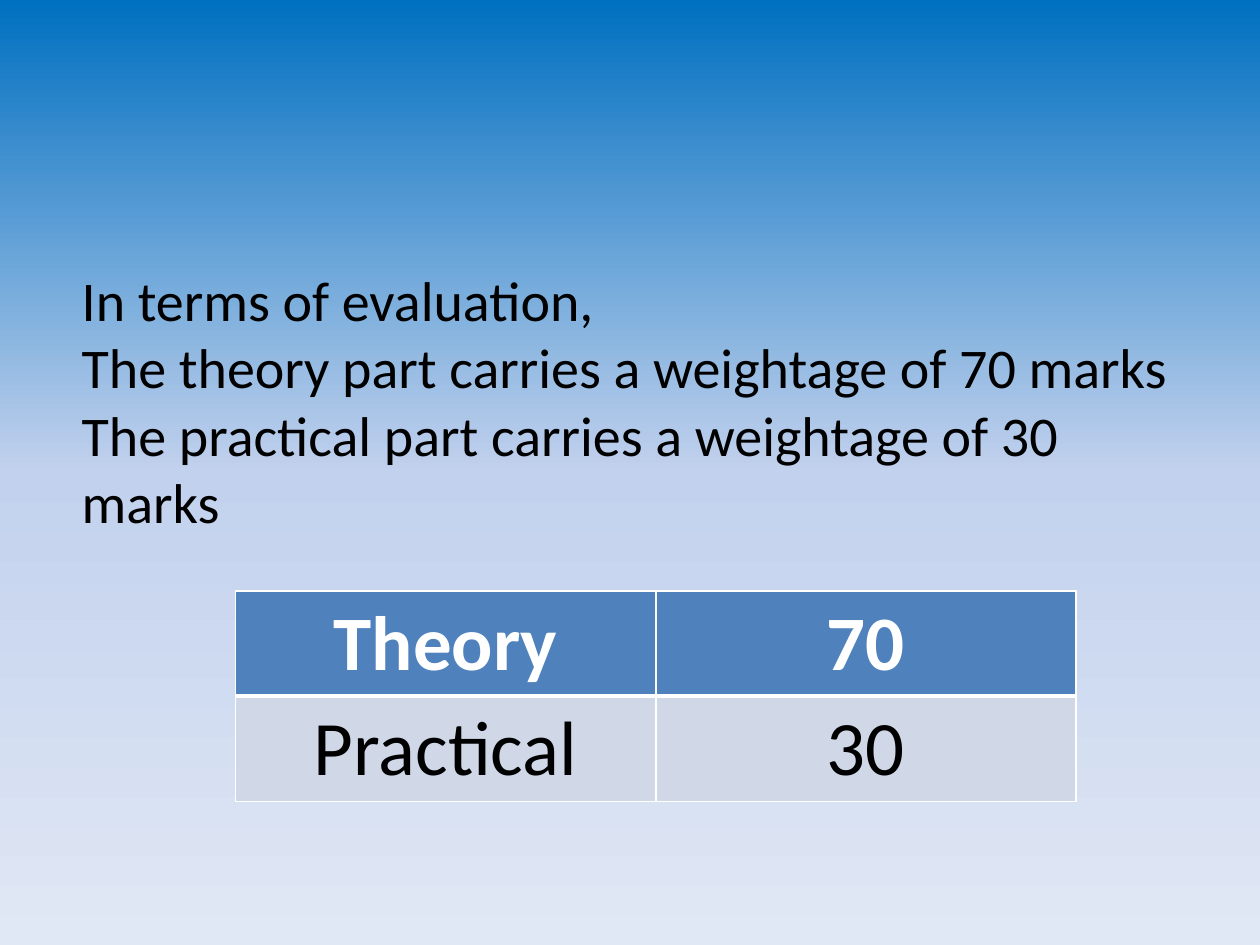
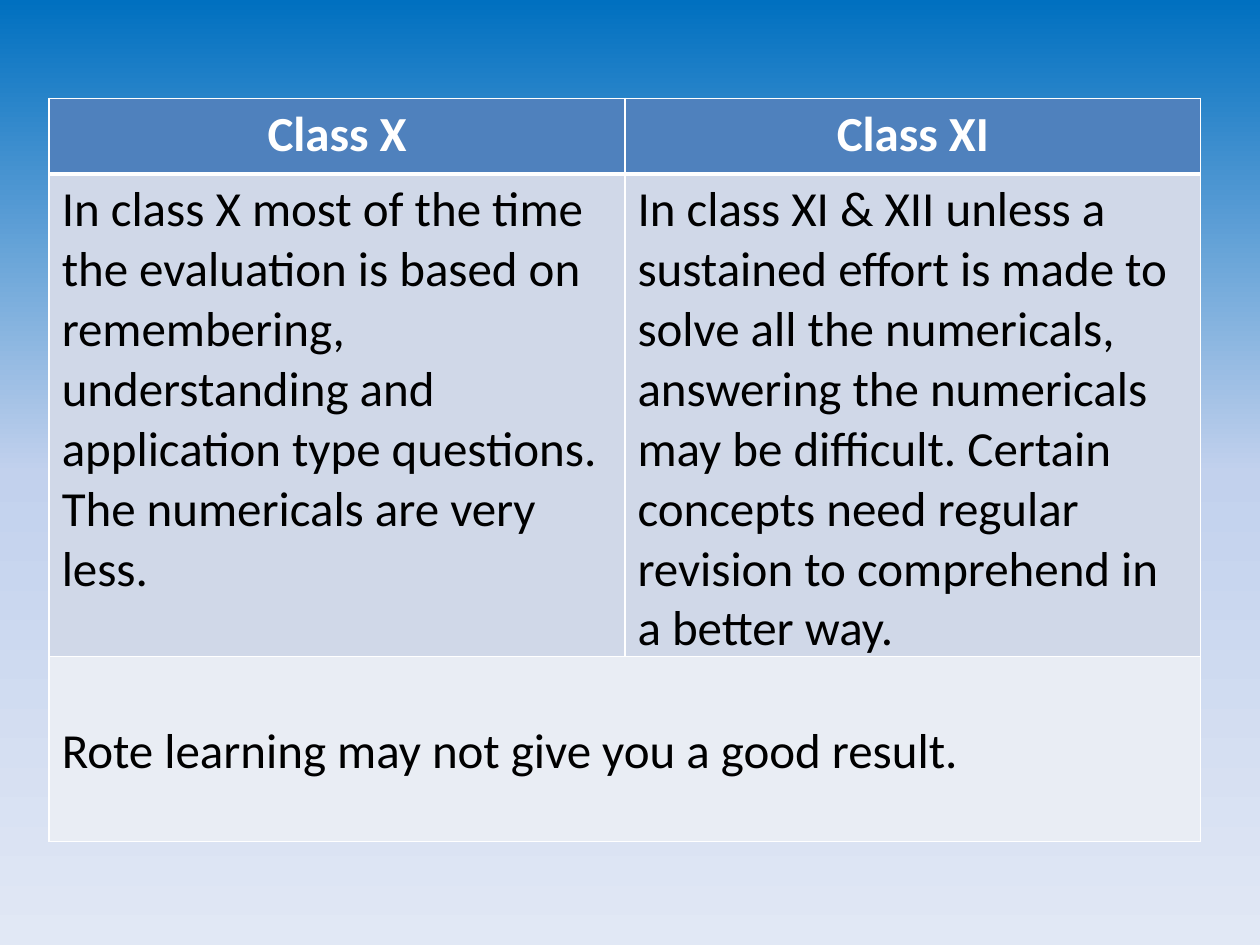
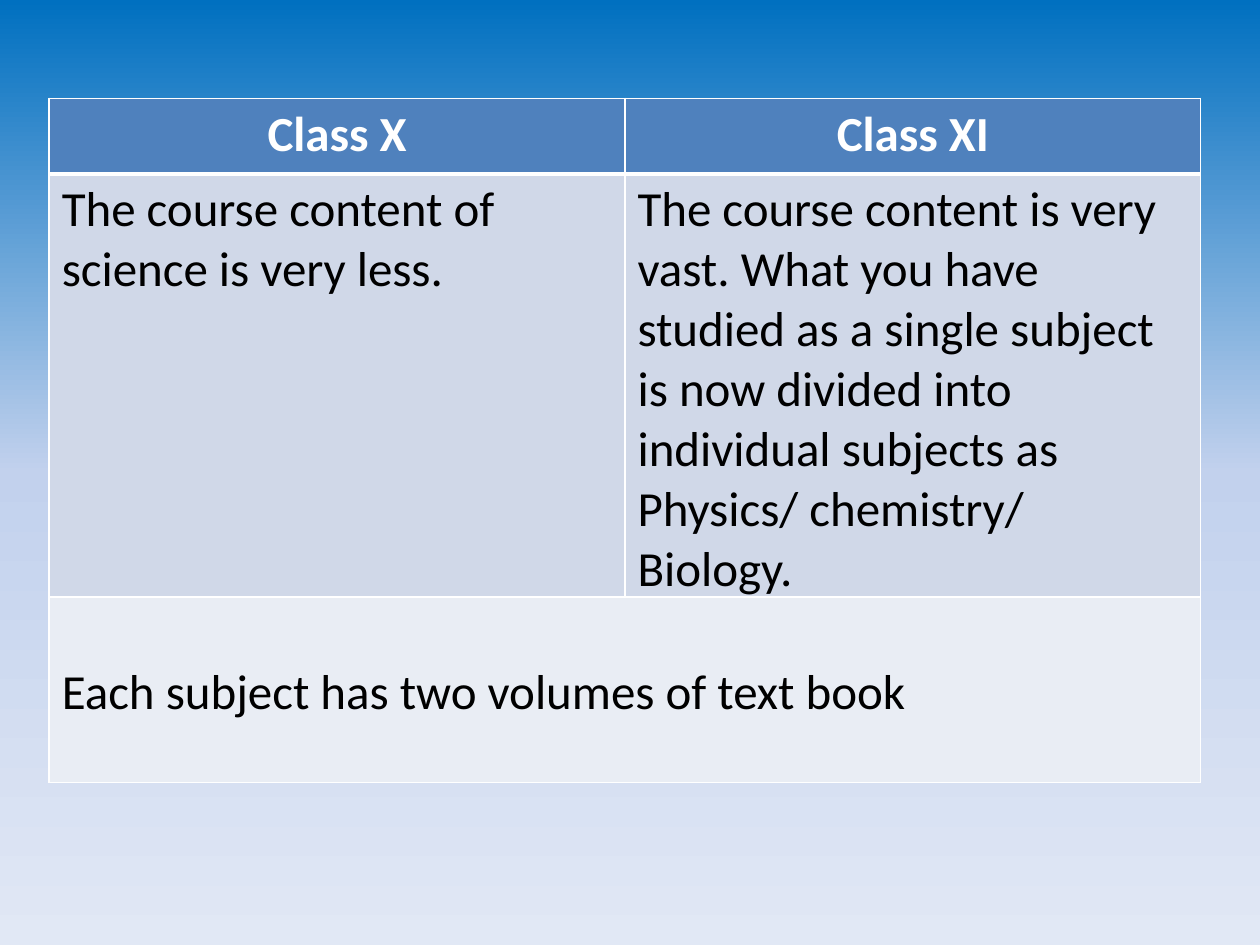
from lxml.etree import SubElement
from pptx import Presentation
from pptx.dml.color import RGBColor
from pptx.enum.text import MSO_ANCHOR, PP_ALIGN
from pptx.oxml.ns import qn
from pptx.util import Inches, Pt

COLUMNS, ROWS = 100, 75
FONT = "Calibri"
WHITE, BLACK = "FFFFFF", "000000"
HEADER, BAND, NOTE = "4F81BD", "D0D8E8", "E9EDF4"
BACKGROUND = [(0, "0070C0"), (50, "C2D1ED"), (100, "E1E8F5")]
COMPARISON_BOX = (3.9, 7.8, 91.4)
HEADER_ROW, NOTE_ROW = 6, 14.7


def rgb(value):
    return RGBColor.from_string(value)


def grid(units):
    return Inches(units / 10)


def format_text(tf, size, color, bold=False, align=PP_ALIGN.LEFT):
    for p in tf.paragraphs:
        p.alignment = align
        for r in p.runs:
            r.font.name = FONT
            r.font.size = Pt(size)
            r.font.bold = bold
            r.font.color.rgb = rgb(color)


def add_slide(prs):
    s = prs.slides.add_slide(prs.slide_layouts[6])
    fill = s.background.fill
    fill.gradient()
    fill.gradient_angle = 270
    stops = next(s.element.iter(qn("a:gsLst")))
    for stop in list(stops):
        stops.remove(stop)
    for percent, color in BACKGROUND:
        stop = SubElement(stops, qn("a:gs"), pos=str(percent * 1000))
        SubElement(stop, qn("a:srgbClr"), val=color)
    return s


def add_border(cell, row):
    tcPr = cell._tc.get_or_add_tcPr()
    top = 3 if row == 1 else 1
    bottom = 3 if row == 0 else 1
    for side, width in (("L", 1), ("R", 1), ("T", top), ("B", bottom)):
        ln = SubElement(tcPr, qn(f"a:ln{side}"), w=str(Pt(width)))
        SubElement(SubElement(ln, qn("a:solidFill")), qn("a:srgbClr"), val=WHITE)


def add_grid_table(s, box, heights, texts, size, body_align):
    left, top, width = box
    columns = len(texts[0])
    table = s.shapes.add_table(
        len(texts), columns, grid(left), grid(top), grid(width), grid(sum(heights))
    ).table
    for column in table.columns:
        column.width = grid(width / columns)
    for i, (height, row) in enumerate(zip(heights, texts)):
        table.rows[i].height = grid(height)
        for j, text in enumerate(row):
            cell = table.cell(i, j)
            cell.text_frame.text = text
            cell.margin_bottom = 0
            add_border(cell, i)
            cell.fill.solid()
            cell.fill.fore_color.rgb = rgb((HEADER, BAND, NOTE)[i])
            if i == 0:
                format_text(cell.text_frame, size, WHITE, True, PP_ALIGN.CENTER)
            else:
                format_text(cell.text_frame, size, BLACK, align=body_align)
    return table


def add_statement(s, box, lines):
    tf = s.shapes.add_textbox(*map(grid, box)).text_frame
    tf.word_wrap = True
    tf.text = "\n".join(lines)
    format_text(tf, 32, BLACK)


def evaluation_slide(prs):
    s = add_slide(prs)
    add_statement(s, (5.5, 20.6, 89.1, 31), [
        "In terms of evaluation,",
        "The theory part carries a weightage of 70 marks",
        "The practical part carries a weightage of 30 marks",
    ])
    marks = [("Theory", "70"), ("Practical", "30")]
    add_grid_table(s, (18.7, 46.9, 66.7), (8.35, 8.35), marks, 44, PP_ALIGN.CENTER)


def comparison_slide(prs, body_row, class_x, class_xi, note):
    s = add_slide(prs)
    texts = [("Class X", "Class XI"), (class_x, class_xi), (note, "")]
    heights = (HEADER_ROW, body_row, NOTE_ROW)
    table = add_grid_table(s, COMPARISON_BOX, heights, texts, 28, PP_ALIGN.LEFT)
    note_cell = table.cell(2, 0)
    note_cell.merge(table.cell(2, 1))
    note_cell.vertical_anchor = MSO_ANCHOR.MIDDLE


def main():
    prs = Presentation()
    prs.slide_width, prs.slide_height = grid(COLUMNS), grid(ROWS)
    evaluation_slide(prs)
    comparison_slide(
        prs, 38.3,
        "In class X most of the time the evaluation is based on remembering, "
        "understanding and application type questions. The numericals are very less.",
        "In class XI & XII unless a sustained effort is made to solve all the "
        "numericals, answering the numericals may be difficult. Certain concepts "
        "need regular revision to comprehend in a better way.",
        "Rote learning may not give you a good result.",
    )
    comparison_slide(
        prs, 33.6,
        "The course content of science is very less.",
        "The course content is very vast. What you have studied as a single subject "
        "is now divided into individual subjects as Physics/ chemistry/ Biology.",
        "Each subject has two volumes of text book",
    )
    prs.save("out.pptx")


if __name__ == "__main__":
    main()
